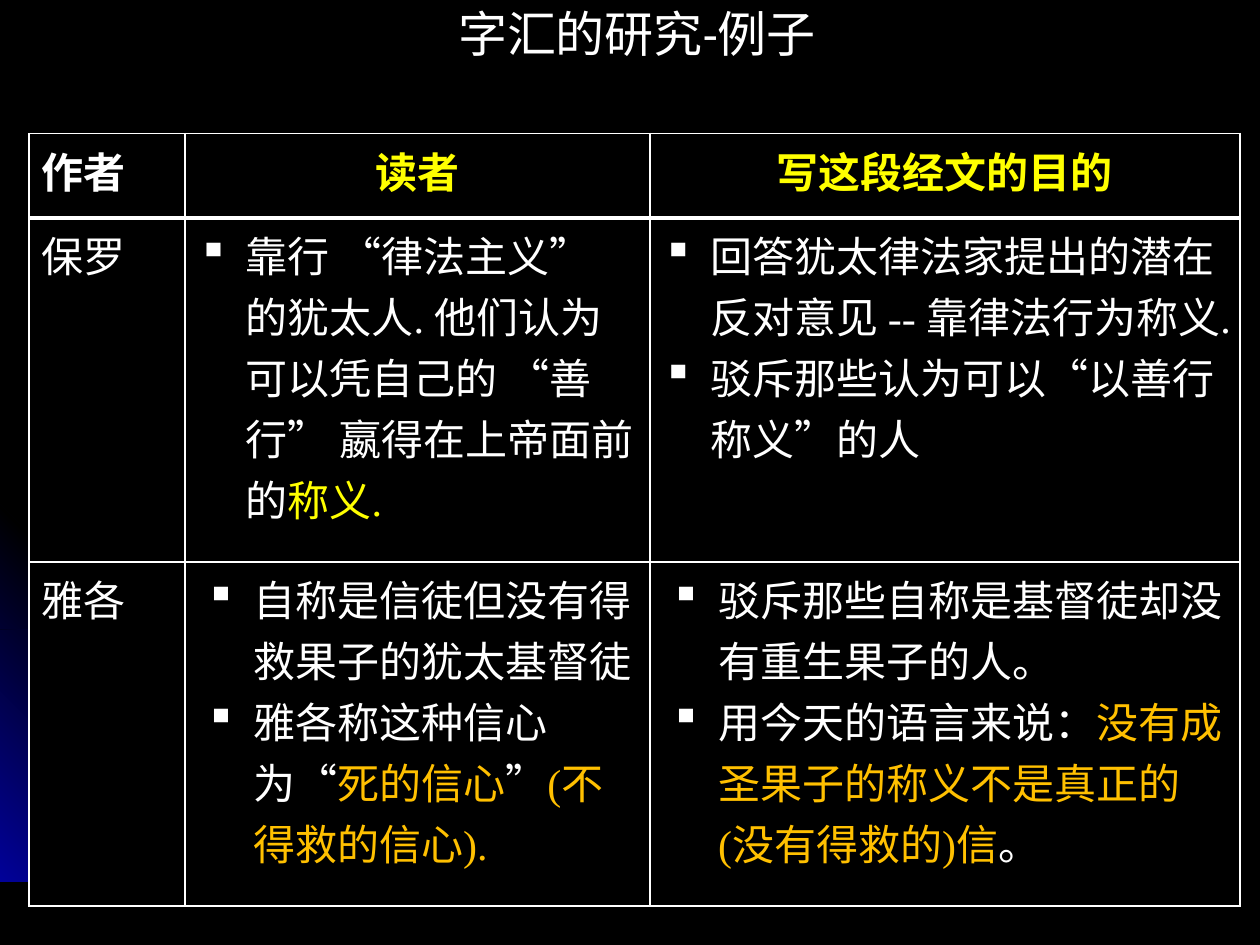
from dataclasses import dataclass
from lxml.etree import SubElement
from pptx import Presentation
from pptx.dml.color import RGBColor
from pptx.enum.lang import MSO_LANGUAGE_ID
from pptx.enum.shapes import MSO_SHAPE
from pptx.enum.text import PP_ALIGN
from pptx.oxml.ns import qn
from pptx.util import Inches, Pt


@dataclass(frozen=True)
class Theme:
    black: str = "000000"
    white: str = "FFFFFF"
    yellow: str = "FFFF00"
    gold: str = "FFC000"
    blue: str = "010199"
    title_font: str = "Calibri"
    body_font: str = "Times New Roman"
    title_size: int = 28
    body_size: int = 24
    line: int = 1
    heavy_line: int = 3


T = Theme()
W, H = 10, 7.5
FADE_OUT = [(0, T.blue), (100, T.black)]
GLOW = [(0, T.blue), (50, T.black), (100, T.blue)]
STREAK = [(0, T.black), (50, T.blue), (100, T.black)]

TITLE = "字汇的研究-例子"
COLS, ROWS = [1.24, 3.69, 4.68], [0.67, 2.73, 2.73]
HEADER = [("作者", T.white), ("读者", T.yellow), ("写这段经文的目的", T.yellow)]
# Each author: name, bullet indent, then the bullets of each column as (text, colour) runs
AUTHORS = [
    ("保罗", 0.38, [
        [[("靠行 “律法主义” 的犹太人. 他们认为可以凭自己的 “善行” 嬴得在上帝面前的", T.white),
          ("称义.", T.yellow)]],
        [[("回答犹太律法家提出的潜在反对意见 -- 靠律法行为称义.", T.white)],
         [("驳斥那些认为可以“以善行称义”的人", T.white)]],
    ]),
    ("雅各", 0.44, [
        [[("自称是信徒但没有得救果子的犹太基督徒", T.white)],
         [("雅各称这种信心为“", T.white), ("死的信心", T.gold), ("”", T.white),
          ("(不得救的信心).", T.gold)]],
        [[("驳斥那些自称是基督徒却没有重生果子的人。", T.white)],
         [("用今天的语言来说：", T.white),
          ("没有成圣果子的称义不是真正的(没有得救的)信", T.gold), ("。", T.white)]],
    ]),
]

ARCS = [
    [(0, 4.35), (0.57, 4.47), (0.98, 4.59), (1.36, 4.77), (1.74, 4.97), (2.09, 5.21),
     (2.42, 5.48), (2.72, 5.78), (3, 6.11), (3.25, 6.48), (3.52, 6.98), (3.72, 7.49)],
    [(0, 4.75), (0.41, 4.88), (0.79, 5.05), (1.17, 5.26), (1.52, 5.49), (1.84, 5.76),
     (2.15, 6.06), (2.42, 6.4), (2.66, 6.76), (2.86, 7.12), (3.03, 7.49)],
    [(0, 4.42), (0.39, 4.55), (0.76, 4.73), (1.11, 4.93), (1.44, 5.16), (1.75, 5.43),
     (2.04, 5.73), (2.29, 6.03), (2.54, 6.39), (2.82, 6.93), (3.03, 7.49)],
]
DOTS = [(0.36, 4.83, 0.15, 315), (2.67, 6.74, 0.16, 45), (1.37, 4.73, 0.21, 315)]


def set_gradient(sp, stops, angle):
    """Fill with (percent, colour) stops; the angle runs clockwise in degrees."""
    sp.shadow.inherit = False
    sp.line.fill.background()
    sp.fill.gradient()
    grad = sp.fill._xPr.find(qn("a:gradFill"))
    for child in list(grad):
        grad.remove(child)
    stop_list = SubElement(grad, qn("a:gsLst"))
    for pos, color in stops:
        stop = SubElement(stop_list, qn("a:gs"), pos=str(pos * 1000))
        SubElement(stop, qn("a:srgbClr"), val=color)
    SubElement(grad, qn("a:lin"), ang=str(angle * 60000), scaled="0")


def add_outline(slide, points, stops, angle):
    builder = slide.shapes.build_freeform(*points[0], scale=Inches(1))
    builder.add_line_segments(points[1:], close=True)
    set_gradient(builder.convert_to_shape(), stops, angle)


def add_corner(slide, bottom, side, band):
    """Glowing corner triangle, thin arcs and dots."""
    top = bottom - side
    arcs = [arc + [(max(0, x - band), min(bottom, y + band)) for x, y in reversed(arc)]
            for arc in ARCS]
    add_outline(slide, arcs[0], STREAK, 45)
    add_outline(slide, [(side, bottom), (0, bottom), (0, top)], GLOW, 315)
    for arc in arcs[1:]:
        add_outline(slide, arc, STREAK, 45)
    for x, y, size, angle in DOTS:
        sp = slide.shapes.add_shape(MSO_SHAPE.OVAL, *map(Inches, (x, y, size, size)))
        set_gradient(sp, FADE_OUT, angle)


def add_runs(p, runs, font, size, bold=False):
    for text, color in runs:
        r = p.add_run()
        r.text = text
        fmt = {"name": font, "size": Pt(size), "bold": bold,
               "language_id": MSO_LANGUAGE_ID.SIMPLIFIED_CHINESE}
        for key, value in fmt.items():
            setattr(r.font, key, value)
        r.font.color.rgb = RGBColor.from_string(color)


def add_bullets(tf, items, indent):
    for i, runs in enumerate(items):
        p = tf.add_paragraph() if i else tf.paragraphs[0]
        pPr = p._p.get_or_add_pPr()
        pPr.set("marL", str(Inches(indent)))
        pPr.set("indent", str(Inches(-0.38)))
        SubElement(pPr, qn("a:buChar"), char="▪")
        add_runs(p, runs, T.body_font, T.body_size)


def style_cell(cell, top, bottom):
    """Black fill and white borders of the given top and bottom widths."""
    tcPr = cell._tc.get_or_add_tcPr()
    for side, width in zip("LRTB", (T.line, T.line, top, bottom)):
        ln = SubElement(tcPr, qn(f"a:ln{side}"), w=str(Pt(width)))
        SubElement(SubElement(ln, qn("a:solidFill")), qn("a:srgbClr"), val=T.white)
    cell.fill.solid()
    cell.fill.fore_color.rgb = RGBColor.from_string(T.black)


def add_title(slide, box):
    tf = slide.shapes.add_textbox(*map(Inches, box)).text_frame
    tf.word_wrap = True
    p = tf.paragraphs[0]
    fmt = {"alignment": PP_ALIGN.CENTER, "line_spacing": 0.8,
           "space_before": Pt(0.2 * T.title_size)}
    for key, value in fmt.items():
        setattr(p, key, value)
    add_runs(p, [(TITLE, T.white)], T.title_font, T.title_size)


def add_comparison(slide, box):
    table = slide.shapes.add_table(len(ROWS), len(COLS), *map(Inches, box)).table
    for col, share in zip(table.columns, COLS):
        col.width = Inches(box[2] * share / sum(COLS))
    for row, share in zip(table.rows, ROWS):
        row.height = Inches(box[3] * share / sum(ROWS))
    for r, row in enumerate(table.rows):
        for cell in row.cells:
            style_cell(cell, T.heavy_line if r == 1 else T.line,
                       T.heavy_line if r == 0 else T.line)
    for c, run in enumerate(HEADER):
        p = table.cell(0, c).text_frame.paragraphs[0]
        p.alignment = PP_ALIGN.CENTER if c else PP_ALIGN.LEFT
        add_runs(p, [run], T.body_font, T.body_size, bold=True)
    for r, (name, indent, columns) in enumerate(AUTHORS, 1):
        p = table.cell(r, 0).text_frame.paragraphs[0]
        add_runs(p, [(name, T.white)], T.body_font, T.body_size)
        for c, items in enumerate(columns, 1):
            add_bullets(table.cell(r, c).text_frame, items, indent)


def main():
    prs = Presentation()
    prs.slide_width, prs.slide_height = Inches(W), Inches(H)
    slide = prs.slides.add_slide(prs.slide_layouts[6])
    slide.background.fill.solid()
    slide.background.fill.fore_color.rgb = RGBColor.from_string(T.black)
    add_corner(slide, bottom=7.49, side=3.22, band=0.02)
    add_comparison(slide, (0.23, 1.06, sum(COLS), sum(ROWS)))
    add_title(slide, (0.33, 0.07, 9.45, 0.53))
    prs.save("out.pptx")


if __name__ == "__main__":
    main()
